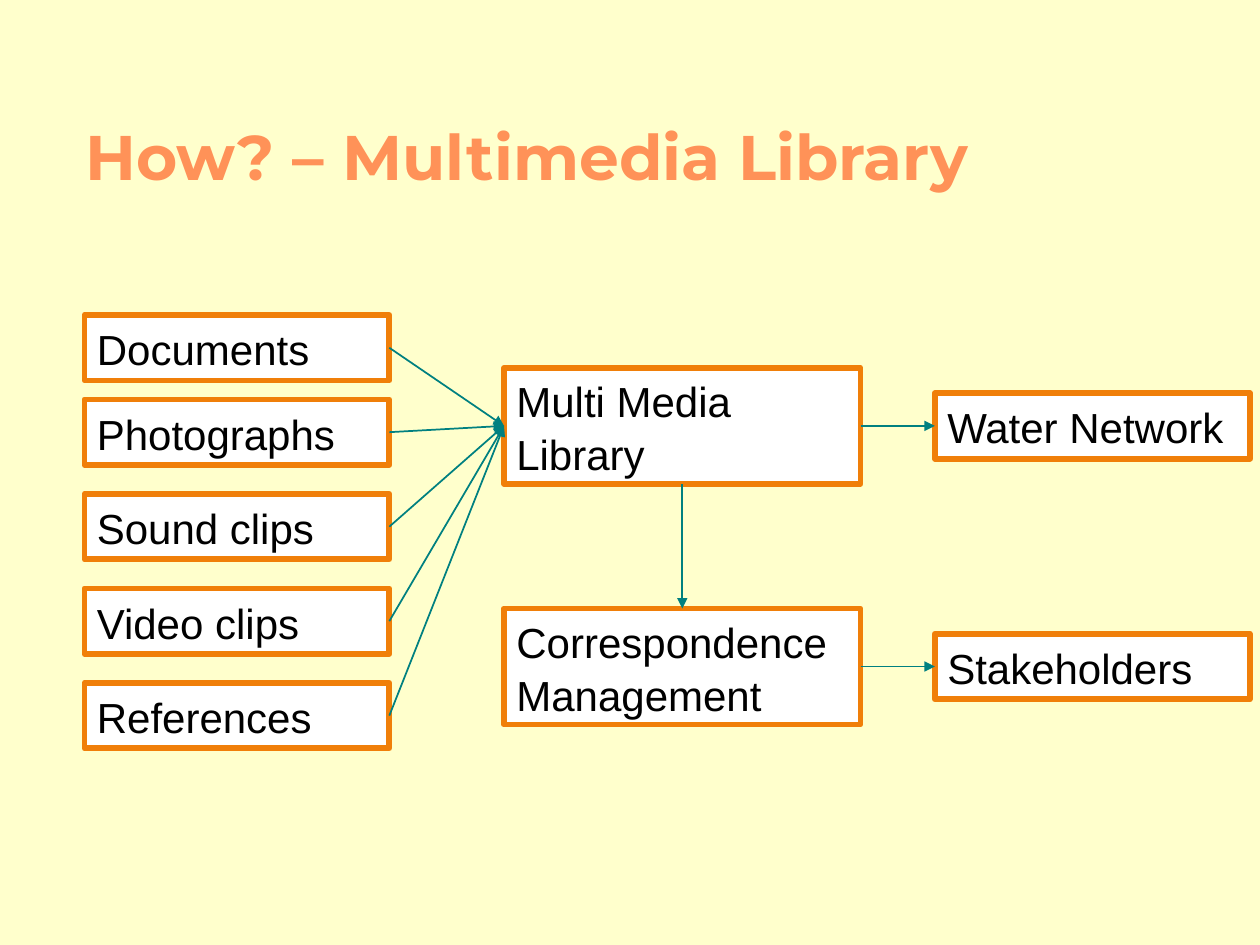
from typing import NamedTuple

from lxml.etree import SubElement
from pptx import Presentation
from pptx.dml.color import RGBColor
from pptx.enum.shapes import MSO_CONNECTOR, MSO_SHAPE
from pptx.enum.text import MSO_ANCHOR, PP_ALIGN
from pptx.oxml.ns import qn
from pptx.shapes.autoshape import Shape
from pptx.slide import Slide
from pptx.util import Inches, Pt

BACKGROUND, TITLE_COLOR = "FFFFCC", "FF9258"
BOX_FILL, BOX_LINE, TEXT_COLOR, ARROW_COLOR = "FFFFFF", "F07F09", "000000", "008080"
TOP, LEFT, BOTTOM, RIGHT = range(4)  # connection sites of a rectangle
LIBRARY_MIDDLE, CORRESPONDENCE_MIDDLE = 3.38, 5.29


class Box(NamedTuple):
    text: str
    left: float
    middle: float
    width: float
    height: float = 0.52


class Arrow(NamedTuple):
    start: str
    start_site: int
    end: str
    end_site: int


SOURCES = ["Documents", "Photographs", "Sound clips", "Video clips", "References"]
LIBRARY, CORRESPONDENCE = "Multi Media Library", "Correspondence Management"
NETWORK, STAKEHOLDERS = "Water Network", "Stakeholders"

BOXES = [
    # Documents sits slightly above the even 0.75 inch rhythm of the other sources
    *(Box(text, 0.67, 2.76 if row == 0 else 2.68 + 0.75 * row, 2.42)
      for row, text in enumerate(SOURCES)),
    Box(LIBRARY, 4, LIBRARY_MIDDLE, 2.83, 0.92),
    Box(CORRESPONDENCE, 4, CORRESPONDENCE_MIDDLE, 2.83, 0.92),
    Box(NETWORK, 7.42, LIBRARY_MIDDLE, 2.5),
    Box(STAKEHOLDERS, 7.42, CORRESPONDENCE_MIDDLE, 2.5),
]
ARROWS = [
    *(Arrow(source, RIGHT, LIBRARY, LEFT) for source in SOURCES),
    Arrow(LIBRARY, BOTTOM, CORRESPONDENCE, TOP),
    Arrow(LIBRARY, RIGHT, NETWORK, LEFT),
    Arrow(CORRESPONDENCE, RIGHT, STAKEHOLDERS, LEFT),
]


def color(value: str) -> RGBColor:
    return RGBColor.from_string(value)


def write_text(shape: Shape, text: str, *, font: str, size: float, fill: str,
               bold: bool = False, anchor: MSO_ANCHOR = MSO_ANCHOR.MIDDLE,
               line_spacing: float = 1.0) -> None:
    frame = shape.text_frame
    frame.word_wrap = True
    frame.vertical_anchor = anchor
    para = frame.paragraphs[0]
    para.alignment = PP_ALIGN.LEFT
    para.line_spacing = line_spacing
    span = para.add_run()
    span.text = text
    span.font.name = font
    span.font.size = Pt(size)
    span.font.bold = bold
    span.font.color.rgb = color(fill)


def draw_title(page: Slide, text: str) -> None:
    title = page.shapes.add_textbox(Inches(0.58), Inches(0.33), Inches(8.5), Inches(1.25))
    write_text(title, text, font="Montserrat", size=36, fill=TITLE_COLOR,
               bold=True, anchor=MSO_ANCHOR.BOTTOM)


def draw_box(page: Slide, box: Box) -> Shape:
    shape = page.shapes.add_shape(
        MSO_SHAPE.RECTANGLE, Inches(box.left), Inches(box.middle - box.height / 2),
        Inches(box.width), Inches(box.height))
    shape.shadow.inherit = False
    shape.fill.solid()
    shape.fill.fore_color.rgb = color(BOX_FILL)
    shape.line.color.rgb = color(BOX_LINE)
    shape.line.width = Pt(3.35)
    write_text(shape, box.text, font="Arial", size=24, fill=TEXT_COLOR, line_spacing=1.05)
    return shape


def draw_arrow(page: Slide, arrow: Arrow, shapes: dict[str, Shape]) -> None:
    connector = page.shapes.add_connector(MSO_CONNECTOR.STRAIGHT, 0, 0, 0, 0)
    connector.begin_connect(shapes[arrow.start], arrow.start_site)
    connector.end_connect(shapes[arrow.end], arrow.end_site)
    connector.line.color.rgb = color(ARROW_COLOR)
    connector.line.width = Pt(1)
    SubElement(connector.line._get_or_add_ln(), qn("a:tailEnd"), type="triangle")
    SubElement(connector._element.spPr, qn("a:effectLst"))


def main() -> None:
    deck = Presentation()
    deck.slide_width, deck.slide_height = Inches(10), Inches(7.5)
    page = deck.slides.add_slide(deck.slide_layouts[6])
    page.background.fill.solid()
    page.background.fill.fore_color.rgb = color(BACKGROUND)

    draw_title(page, "How? – Multimedia Library")
    shapes = {box.text: draw_box(page, box) for box in BOXES}
    for arrow in ARROWS:
        draw_arrow(page, arrow, shapes)
    deck.save("out.pptx")


if __name__ == "__main__":
    main()
